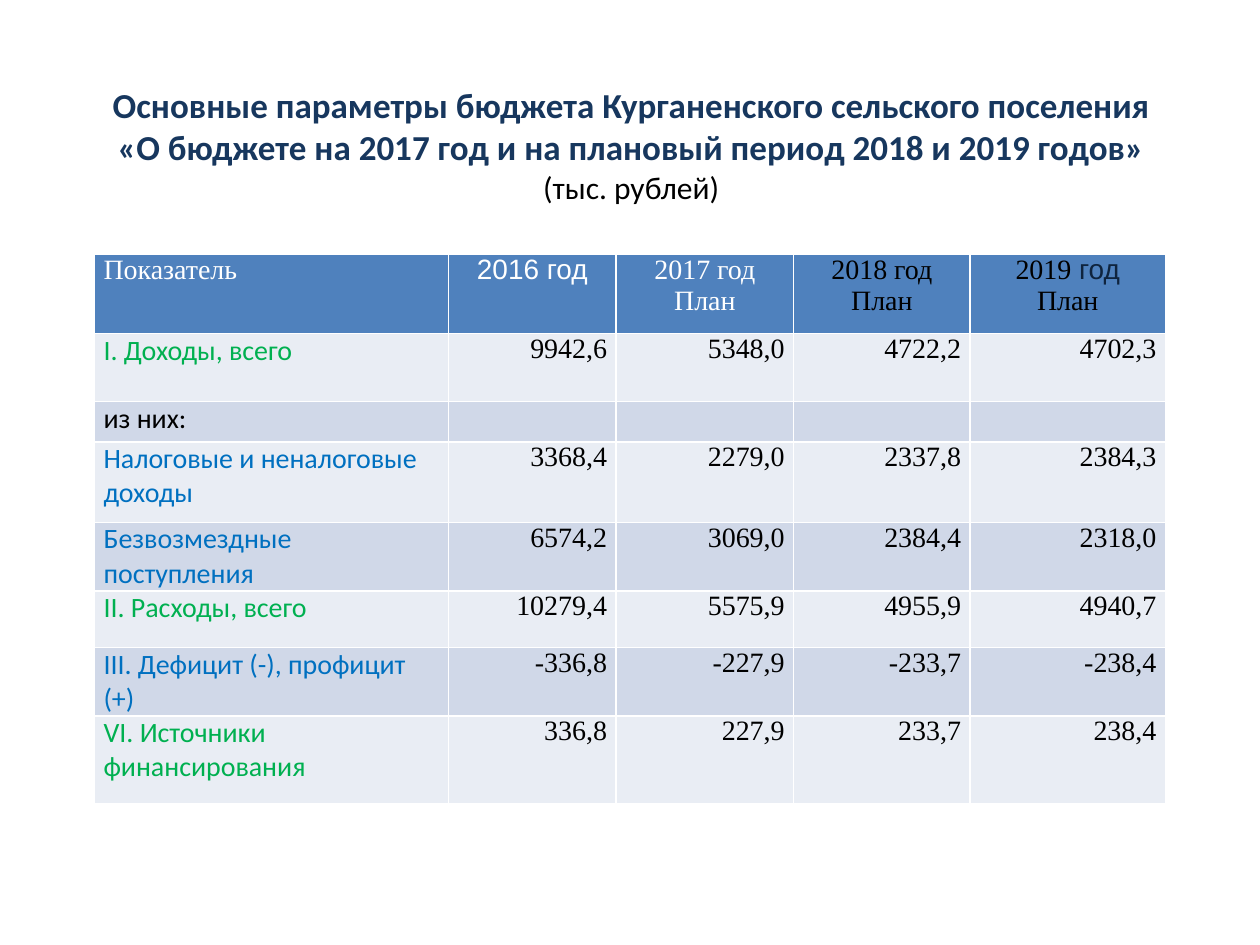
from dataclasses import dataclass

from lxml import etree
from pptx import Presentation
from pptx.dml.color import RGBColor
from pptx.enum import text
from pptx.oxml import ns
from pptx.util import Pt

COLORS = {
    "title": "17375E", "black": "000000", "white": "FFFFFF", "navy": "0F243E",
    "green": "00B050", "blue": "0070C0",
    "header": "4F81BD", "odd": "E9EDF4", "even": "D0D8E8",
}
SANS, SERIF, ARIAL = "Calibri", "Times New Roman", "Arial"
LEFT, CENTER, RIGHT = text.PP_ALIGN.LEFT, text.PP_ALIGN.CENTER, text.PP_ALIGN.RIGHT
CELL_SIZE = 16


@dataclass
class Run:
    text: str
    font: str = SERIF
    color: str = "black"


@dataclass
class BudgetRow:
    label: str
    color: str
    height: float
    values: tuple = ("",) * 4


HEADER_HEIGHT = 45.4
COLUMN_WIDTHS = (202.3, 95.8, 101.5, 100.8, 111.6)
# Each header cell is a list of paragraphs, each paragraph a list of runs.
HEADER = [
    [[Run("Показатель", SERIF, "white")]],
    [[Run("2016 год", ARIAL, "white")]],
    [[Run("2017 год План", SERIF, "white")]],
    [[Run("2018 год")], [Run("План")]],
    [[Run("2019"), Run(" год", ARIAL, "navy")], [Run("План")]],
]
ROWS = [
    BudgetRow("I. Доходы, всего", "green", 38.9, ("9942,6", "5348,0", "4722,2", "4702,3")),
    BudgetRow("из них:", "black", 23),
    BudgetRow("Налоговые и неналоговые доходы", "blue", 46,
              ("3368,4", "2279,0", "2337,8", "2384,3")),
    BudgetRow("Безвозмездные поступления", "blue", 33.8,
              ("6574,2", "3069,0", "2384,4", "2318,0")),
    BudgetRow("II. Расходы, всего", "green", 32.4, ("10279,4", "5575,9", "4955,9", "4940,7")),
    BudgetRow("III. Дефицит (-), профицит (+)", "blue", 38.2,
              ("-336,8", "-227,9", "-233,7", "-238,4")),
    BudgetRow("VI. Источники финансирования", "green", 50.4,
              ("336,8", "227,9", "233,7", "238,4")),
]


def rgb(name: str) -> RGBColor:
    return RGBColor.from_string(COLORS[name])


def set_font(font, name: str, size: float, color: str, bold: bool = False) -> None:
    font.name, font.size, font.bold = name, Pt(size), bold
    font.color.rgb = rgb(color)


def add_borders(cell) -> None:
    """Draw a 1 pt white line on all four sides; lines precede the fill."""
    tc_pr = cell._tc.get_or_add_tcPr()
    for i, side in enumerate("LRTB"):
        ln = etree.Element(ns.qn(f"a:ln{side}"), w=str(Pt(1)))
        fill = etree.SubElement(ln, ns.qn("a:solidFill"))
        etree.SubElement(fill, ns.qn("a:srgbClr"), val=COLORS["white"])
        tc_pr.insert(i, ln)


def fill_cell(cell, paragraphs: list[list[Run]], align, fill: str) -> None:
    cell.margin_left = cell.margin_right = Pt(5.2)
    cell.margin_top = cell.margin_bottom = Pt(0)
    cell.fill.solid()
    cell.fill.fore_color.rgb = rgb(fill)
    add_borders(cell)
    tf = cell.text_frame
    for i, runs in enumerate(paragraphs):
        p = tf.add_paragraph() if i else tf.paragraphs[0]
        p.alignment = align
        if len(runs) == 1:
            set_font(p.font, runs[0].font, CELL_SIZE, runs[0].color)
        for run in runs:
            if not run.text:
                continue
            r = p.add_run()
            r.text = run.text
            if len(runs) > 1:
                set_font(r.font, run.font, CELL_SIZE, run.color)


def add_title(slide) -> None:
    sp = slide.shapes.title
    sp.left, sp.top, sp.width, sp.height = Pt(36.7), Pt(31.7), Pt(648), Pt(102.2)
    tf = sp.text_frame
    tf.auto_size = text.MSO_AUTO_SIZE.NONE
    tf.vertical_anchor = text.MSO_ANCHOR.MIDDLE
    p = tf.paragraphs[0]
    p.alignment = CENTER
    for line, size, color, bold in (
        ("Основные параметры бюджета Курганенского сельского поселения", 20, "title", True),
        ("«О бюджете на 2017 год и на плановый период 2018 и 2019 годов»", 20, "title", True),
        ("(тыс. рублей)", 18, "black", False),
    ):
        if p.runs:
            p.add_line_break()
        r = p.add_run()
        r.text = line
        set_font(r.font, SANS, size, color, bold)


def add_budget_table(slide) -> None:
    heights = [HEADER_HEIGHT] + [row.height for row in ROWS]
    table = slide.shapes.add_table(
        len(heights), len(COLUMN_WIDTHS), Pt(54), Pt(145.2),
        Pt(sum(COLUMN_WIDTHS)), Pt(sum(heights))).table
    for column, width in zip(table.columns, COLUMN_WIDTHS):
        column.width = Pt(width)
    for row, height in zip(table.rows, heights):
        row.height = Pt(height)

    for c, paragraphs in enumerate(HEADER):
        fill_cell(table.cell(0, c), paragraphs, CENTER if c else LEFT, "header")
    for n, row in enumerate(ROWS, start=1):
        band = "odd" if n % 2 else "even"
        fill_cell(table.cell(n, 0), [[Run(row.label, SANS, row.color)]], LEFT, band)
        for c, value in enumerate(row.values, start=1):
            fill_cell(table.cell(n, c), [[Run(value)]], RIGHT, band)


def main() -> None:
    prs = Presentation()
    prs.slide_width, prs.slide_height = Pt(720), Pt(540)
    slide = prs.slides.add_slide(prs.slide_layouts[5])
    add_title(slide)
    add_budget_table(slide)
    prs.save("out.pptx")


if __name__ == "__main__":
    main()
